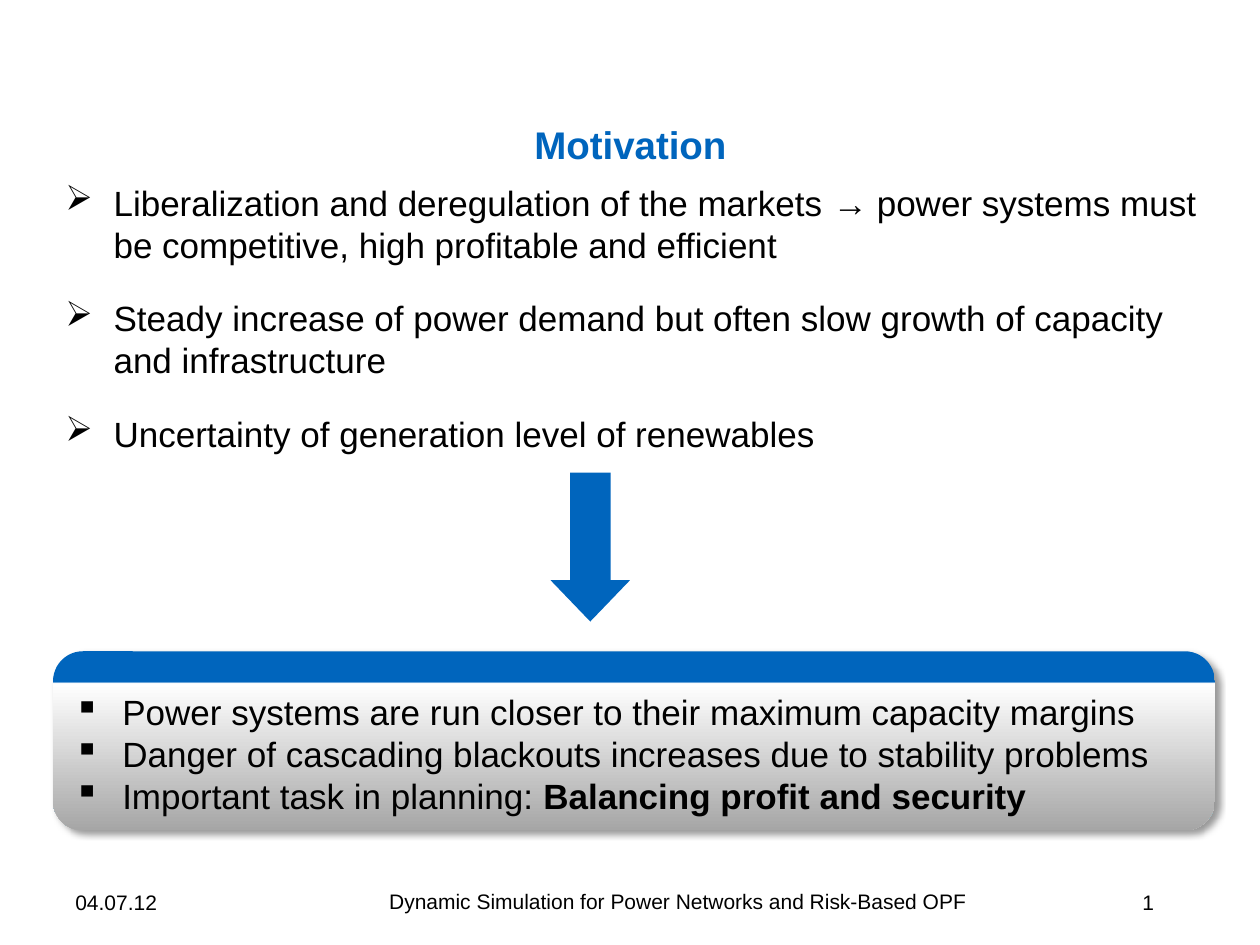
from lxml import etree
from pptx import Presentation
from pptx.dml.color import RGBColor as RGB
from pptx.enum.shapes import MSO_SHAPE as SHAPE
from pptx.enum.text import MSO_ANCHOR as ANCHOR, PP_ALIGN as ALIGN
from pptx.oxml import parse_xml
from pptx.oxml.ns import nsdecls, qn
from pptx.util import Cm, Pt

COLORS = {"blue": "0065BD", "black": "000000", "white": "FFFFFF", "gray": "A6A6A6"}

# Content: each paragraph is a list of (text, font changes)
TITLE = [[("Motivation", {"bold": True})]]
REASONS = [
    [("Liberalization and deregulation of the markets ", {}),
     ("→ ", {"name": "Times New Roman"}),
     ("power systems must be competitive, high profitable and efficient", {})],
    [("Steady increase of power demand but often slow growth of capacity and infrastructure", {})],
    [("Uncertainty of generation level of renewables", {})],
]
CONSEQUENCES = [
    [("Power systems are run closer to their maximum capacity margins", {})],
    [("Danger of cascading blackouts increases due to stability problems", {})],
    [("Important task in planning: ", {}),
     ("Balancing profit and security", {"bold": True})],
]
# Footer: text, (left, top, width, height) in cm, alignment
FOOTER = [
    ("04.07.12", (1.27, 17.81, 3.3, 0.86), ALIGN.LEFT),
    ("Dynamic Simulation for Power Networks and Risk-Based OPF",
     (4.88, 17.78, 17.58, 0.84), ALIGN.CENTER),
    ("1", (22.78, 17.81, 1.35, 0.86), ALIGN.LEFT),
]
CARD_STOPS = [(0, "blue"), (17, "blue"), (18, "white"), (100, "gray")]
LEFT, WIDTH, INDENT = 1.07, 23.42, 0.97


def box(*lengths):
    return [Cm(v) for v in lengths]


def write(tf, paragraphs, size, color="black", align=ALIGN.LEFT, bullet=None, before=0):
    tf.word_wrap = True
    for i, runs in enumerate(paragraphs):
        p = tf.add_paragraph() if i else tf.paragraphs[0]
        p.alignment, p.space_before = align, Pt(before)
        if bullet:
            ppr = p._p.get_or_add_pPr()
            ppr.set("marL", str(Cm(INDENT)))
            ppr.set("indent", str(-Cm(INDENT)))
            etree.SubElement(ppr, qn("a:buChar"), char=bullet)
        for text, changes in runs:
            r = p.add_run()
            r.text = text
            r.font.color.rgb = RGB.from_string(COLORS[color])
            for key, value in {"name": "Arial", "size": Pt(size), **changes}.items():
                setattr(r.font, key, value)


def style_card(sp):
    """Banded gradient from top to bottom, with a soft shadow."""
    stops = "".join(f'<a:gs pos="{pos * 1000}"><a:srgbClr val="{COLORS[name]}"/></a:gs>'
                    for pos, name in CARD_STOPS)
    geom = sp._element.spPr.find(qn("a:prstGeom"))
    geom.addnext(parse_xml(
        f'<a:gradFill {nsdecls("a")} rotWithShape="1"><a:gsLst>{stops}</a:gsLst>'
        '<a:lin ang="5400000" scaled="0"/></a:gradFill>'))
    sp.line.fill.background()
    sp._element.spPr.append(parse_xml(
        f'<a:effectLst {nsdecls("a")}><a:outerShdw blurRad="{Pt(4)}" dist="{Pt(3)}" '
        f'dir="2700000" algn="tl" rotWithShape="0"><a:srgbClr val="{COLORS["black"]}">'
        '<a:alpha val="40000"/></a:srgbClr></a:outerShdw></a:effectLst>'))


def main():
    prs = Presentation()
    prs.slide_width, prs.slide_height = Cm(25.4), Cm(19.05)
    slide = prs.slides.add_slide(prs.slide_layouts[5])
    shapes = slide.shapes

    # Title
    title = shapes.title
    title.left, title.top, title.width, title.height = box(1.42, 2.31, 22.58, 1.19)
    title.text_frame.vertical_anchor = ANCHOR.BOTTOM
    write(title.text_frame, TITLE, 22, "blue", ALIGN.CENTER)

    # Reasons
    tb = shapes.add_textbox(*box(LEFT, 3.53, WIDTH, 5.79))
    write(tb.text_frame, REASONS, 20, bullet="➢", before=18)

    # Arrow from the reasons to the consequences
    arrow = shapes.add_shape(SHAPE.DOWN_ARROW, *box(11.1, 9.53, 1.6, 3))
    arrow.adjustments[0], arrow.adjustments[1] = 0.51, 0.52
    arrow.fill.solid()
    arrow.fill.fore_color.rgb = RGB.from_string(COLORS["blue"])
    arrow.line.fill.background()
    arrow.shadow.inherit = False

    # Consequences card, its text starting below the blue band
    card = shapes.add_shape(SHAPE.ROUNDED_RECTANGLE, *box(LEFT, 13.13, WIDTH, 3.61))
    style_card(card)
    tf = card.text_frame
    tf.vertical_anchor, tf.margin_top = ANCHOR.TOP, Cm(0.61)
    write(tf, CONSEQUENCES, 20, bullet="▪")

    # Footer
    for text, place, align in FOOTER:
        tb = shapes.add_textbox(*box(*place))
        write(tb.text_frame, [[(text, {})]], 12, align=align)

    prs.save("out.pptx")


if __name__ == "__main__":
    main()
